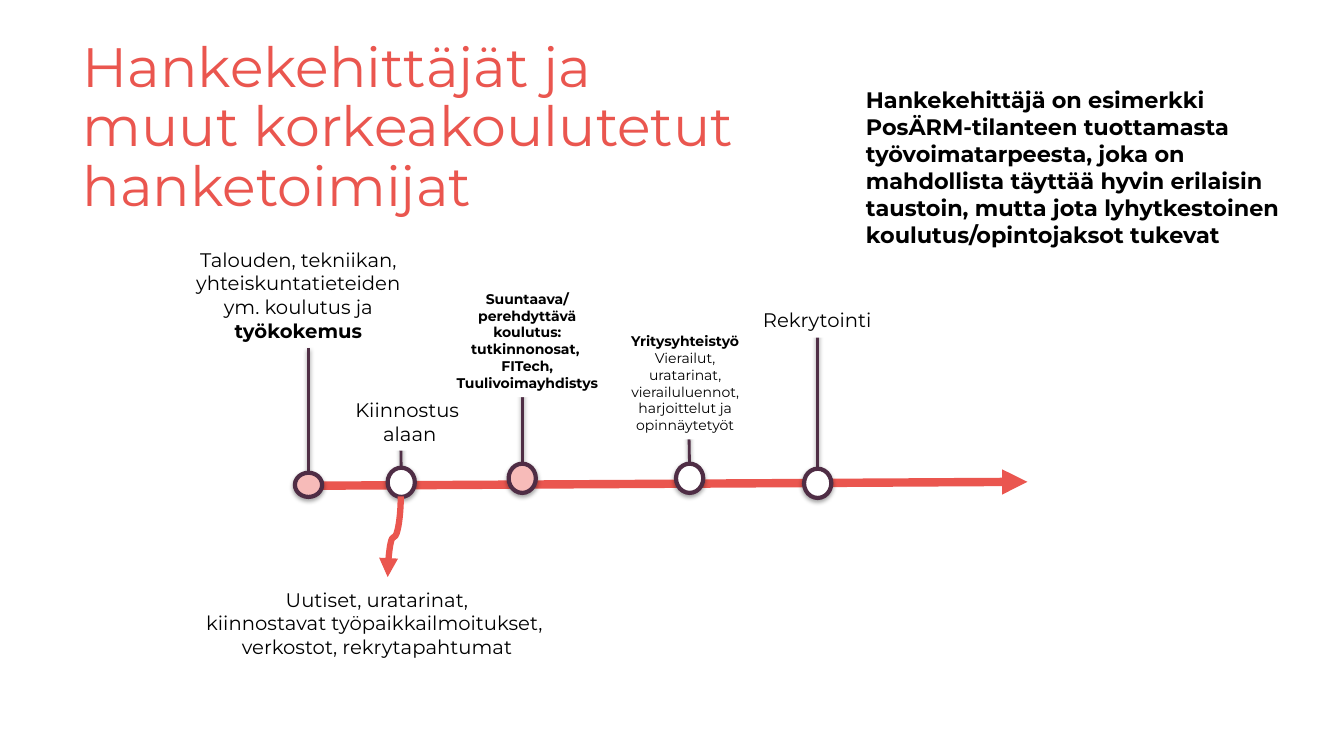
import copy

import pptx
import pptx.dml.color
import pptx.enum.shapes
import pptx.enum.text
import pptx.oxml.ns
import pptx.util
from lxml import etree
from pptx.util import Inches

RGBColor = pptx.dml.color.RGBColor
CORAL = RGBColor(0xEA, 0x56, 0x4F)
PINK = RGBColor(0xF7, 0xBB, 0xB9)
PLUM_STEM = RGBColor(0x50, 0x2F, 0x46)
PLUM_RING = RGBColor(0x4F, 0x2D, 0x45)
WHITE = RGBColor(0xFF, 0xFF, 0xFF)
BLACK = RGBColor(0x00, 0x00, 0x00)
FONT = "Montserrat"

connector_type = pptx.enum.shapes.MSO_CONNECTOR
alignment = pptx.enum.text.PP_ALIGN
auto_size = pptx.enum.text.MSO_AUTO_SIZE
qn = pptx.oxml.ns.qn


def write_text(frame, paragraphs, size, color=BLACK, align=alignment.CENTER, spacing=None):
    """Fill a frame with paragraphs, each a list of (text, bold); a newline is a line break."""
    for index, parts in enumerate(paragraphs):
        paragraph = frame.paragraphs[0] if index == 0 else frame.add_paragraph()
        paragraph.alignment = align
        paragraph.line_spacing = spacing
        for text, bold in parts:
            for line_index, line in enumerate(text.split("\n")):
                if line_index:
                    paragraph.add_line_break()
                    line_break = paragraph._p[-1]
                    line_break.append(copy.deepcopy(run._r.rPr))
                run = paragraph.add_run()
                run.text = line
                run.font.name = FONT
                run.font.size = pptx.util.Pt(size)
                run.font.bold = bold
                run.font.color.rgb = color


def style_effects(shape, color, width, alpha=None, distance=0, arrow=False):
    """Set the line, then a downward shadow (none without alpha) and an optional arrowhead."""
    shape.line.color.rgb = color
    shape.line.width = pptx.util.Pt(width)
    if arrow:
        etree.SubElement(shape.line._get_or_add_ln(), qn("a:tailEnd"), type="triangle")
    effects = etree.SubElement(shape._element.spPr, qn("a:effectLst"))
    if alpha:
        shadow = etree.SubElement(
            effects, qn("a:outerShdw"), blurRad=str(pptx.util.Pt(3.1)),
            dist=str(pptx.util.Pt(distance)), dir="5400000", rotWithShape="0")
        shadow_color = etree.SubElement(shadow, qn("a:srgbClr"), val=str(BLACK))
        etree.SubElement(shadow_color, qn("a:alpha"), val=str(alpha * 1000))


presentation = pptx.Presentation()
presentation.slide_width = Inches(13.33)
presentation.slide_height = Inches(7.5)
slide = presentation.slides.add_slide(presentation.slide_layouts[5])

# Title
title = slide.shapes.title
title.left, title.top = Inches(0.72), Inches(0.74)
title.width, title.height = Inches(7.76), Inches(1.45)
title_frame = title.text_frame
title_frame.word_wrap = True
title_frame.auto_size = auto_size.NONE
title_frame.vertical_anchor = pptx.enum.text.MSO_ANCHOR.MIDDLE
title_frame.margin_bottom = Inches(0.42)
write_text(title_frame, [[("Hankekehittäjät ja \nmuut korkeakoulutetut hanketoimijat", False)]],
           39.6, CORAL, alignment.LEFT, 0.9)

# Timeline
axis = slide.shapes.add_connector(
    connector_type.STRAIGHT, Inches(2.92), Inches(4.82), Inches(10.19), Inches(4.78))
style_effects(axis, CORAL, 6, arrow=True)

# Milestones: stem start x, stem top, stem end x, stem bottom, marker top, marker height, fill
milestones = [
    (3.06, 3.45, 3.06, 4.74, 4.69, 0.24, PINK),
    (3.97, 4.07, 3.98, 4.70, 4.64, 0.29, WHITE),
    (6.82, 3.54, 6.84, 4.67, 4.60, 0.29, WHITE),
    (8.11, 3.16, 8.11, 4.72, 4.65, 0.29, WHITE),
    (5.18, 3.88, 5.18, 4.67, 4.60, 0.29, PINK),
]
MARKER_WIDTH = 0.27
for start_x, stem_top, end_x, stem_bottom, marker_top, marker_height, fill in milestones:
    milestone = slide.shapes.add_group_shape()
    stem = milestone.shapes.add_connector(
        connector_type.STRAIGHT,
        Inches(start_x), Inches(stem_top), Inches(end_x), Inches(stem_bottom))
    style_effects(stem, PLUM_STEM, 2, alpha=38, distance=1.6)
    marker = milestone.shapes.add_shape(
        pptx.enum.shapes.MSO_SHAPE.OVAL,
        Inches(end_x - MARKER_WIDTH / 2), Inches(marker_top),
        Inches(MARKER_WIDTH), Inches(marker_height))
    marker.fill.solid()
    marker.fill.fore_color.rgb = fill
    style_effects(marker, PLUM_RING, 3, alpha=35, distance=1.8)

# Curved arrow from the interest milestone down to its channels
branch = slide.shapes.add_connector(
    connector_type.CURVE, Inches(3.51), Inches(5.26), Inches(4.31), Inches(5.39))
branch._element.spPr.find(qn("a:xfrm")).set("rot", "5400000")
style_effects(branch, CORAL, 4.5, arrow=True)

# Labels: left, top, width, height, wrap, white fill, size, alignment, paragraphs
labels = [
    (1.79, 2.41, 2.34, 1.04, True, False, 14, alignment.CENTER,
     [[("Talouden, tekniikan, yhteiskuntatieteiden ym. koulutus ja ", False),
       ("työkokemus", True)]]),
    (3.2, 3.9, 1.73, 0.57, True, True, 14, alignment.CENTER,
     [[("Kiinnostus \nalaan", False)]]),
    (7.46, 3.01, 1.29, 0.34, False, True, 14, alignment.CENTER,
     [[("Rekrytointi", False)]]),
    (1.93, 5.78, 3.62, 0.81, False, True, 14, alignment.CENTER,
     [[("Uutiset, uratarinat,\nkiinnostavat työpaikkailmoitukset, \n"
        "verkostot, rekrytapahtumat", False)]]),
    (6.14, 3.25, 1.31, 1.11, True, True, 10, alignment.CENTER,
     [[("Yritysyhteistyö", True)],
      [("Vierailut,\nuratarinat, vierailuluennot, harjoittelut ja opinnäytetyöt", False)]]),
    (4.38, 2.83, 1.7, 1.11, True, True, 10, alignment.CENTER,
     [[("Suuntaava/\nperehdyttävä koulutus:", True)],
      [("tutkinnonosat, ", True)],
      [("FITech, Tuulivoimayhdistys", True)]]),
    (8.49, 0.81, 4.41, 1.72, True, False, 16, alignment.LEFT,
     [[("Hankekehittäjä on esimerkki PosÄRM-tilanteen tuottamasta työvoimatarpeesta, "
        "joka on mahdollista täyttää hyvin erilaisin taustoin, mutta jota lyhytkestoinen "
        "koulutus/opintojaksot tukevat", True)]]),
]
for left, top, width, height, wrap, filled, size, align, paragraphs in labels:
    label = slide.shapes.add_textbox(Inches(left), Inches(top), Inches(width), Inches(height))
    if filled:
        label.fill.solid()
        label.fill.fore_color.rgb = WHITE
    label.text_frame.word_wrap = wrap
    label.text_frame.auto_size = auto_size.SHAPE_TO_FIT_TEXT
    write_text(label.text_frame, paragraphs, size, align=align)

presentation.save("out.pptx")
